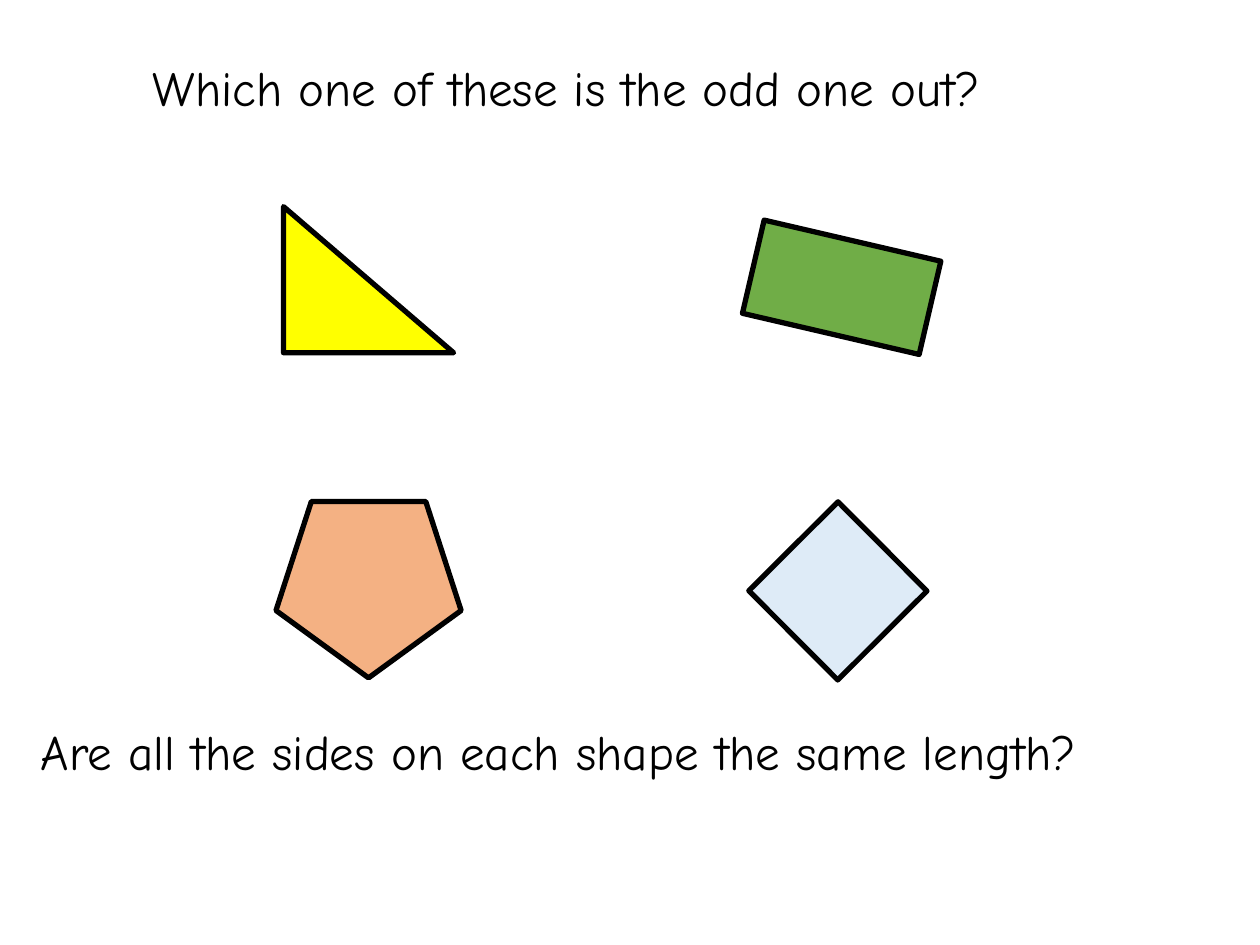
from pptx import Presentation
from pptx.dml.color import RGBColor
from pptx.enum.shapes import MSO_SHAPE
from pptx.enum.text import MSO_ANCHOR, MSO_AUTO_SIZE, PP_ALIGN
from pptx.util import Inches, Pt

TRIANGLE = MSO_SHAPE.ISOSCELES_TRIANGLE
RECTANGLE = MSO_SHAPE.RECTANGLE
PENTAGON = MSO_SHAPE.REGULAR_PENTAGON
TOP = MSO_ANCHOR.TOP
FIT_SHAPE = MSO_AUTO_SIZE.SHAPE_TO_FIT_TEXT
CENTER = PP_ALIGN.CENTER

TITLE_ONLY = 5
FONT = "Comic Neue"
COLORS = {
    "ink": "000000",
    "paper": "FFFFFF",
    "triangle": "FFFF00",
    "rectangle": "70AD47",
    "pentagon": "F4B183",
    "square": "DEEBF7",
}


def color(name):
    return RGBColor.from_string(COLORS[name])


def write_question(holder, box, wording):
    holder.left, holder.top, holder.width, holder.height = map(Inches, box)
    frame = holder.text_frame
    frame.text = wording
    frame.word_wrap = True
    frame.auto_size = FIT_SHAPE
    frame.vertical_anchor = TOP
    frame.margin_left = frame.margin_right = Inches(0.1)
    frame.margin_top = frame.margin_bottom = Inches(0.05)
    paragraph = frame.paragraphs[0]
    paragraph.alignment = CENTER
    paragraph.line_spacing = 1.0
    paragraph.space_before = Pt(0)
    font = paragraph.runs[0].font
    font.name, font.size = FONT, Pt(28)
    font.color.rgb = color("ink")


def draw_polygon(slide, box, kind, fill, rotation=0):
    polygon = slide.shapes.add_shape(kind, *map(Inches, box))
    polygon.rotation = rotation
    polygon.shadow.inherit = False
    polygon.fill.solid()
    polygon.fill.fore_color.rgb = color(fill)
    polygon.line.color.rgb = color("ink")
    polygon.line.width = Pt(3)
    return polygon


def draw_polygons(slide):
    triangle = draw_polygon(slide, (2.25, 1.64, 1.35, 1.16), TRIANGLE, "triangle")
    triangle.adjustments[0] = 0
    draw_polygon(slide, (5.96, 1.9, 1.44, 0.76), RECTANGLE, "rectangle", 13.1)
    draw_polygon(slide, (2.19, 3.98, 1.47, 1.4), PENTAGON, "pentagon", 180)
    draw_polygon(slide, (6.15, 4.19, 1, 1), RECTANGLE, "square", 45.1)


def main():
    presentation = Presentation()
    presentation.slide_width, presentation.slide_height = Inches(10), Inches(7.5)
    slide = presentation.slides.add_slide(presentation.slide_layouts[TITLE_ONLY])
    slide.background.fill.solid()
    slide.background.fill.fore_color.rgb = color("paper")

    write_question(slide.shapes.title, (0.12, 0.41, 8.75, 0.57),
                   "Which one of these is the odd one out?")
    draw_polygons(slide)
    hint_box = (0.12, 5.68, 8.75, 1.04)
    hint = slide.shapes.add_textbox(*map(Inches, hint_box))
    write_question(hint, hint_box, "Are all the sides on each shape the same length? ")

    presentation.save("out.pptx")


if __name__ == "__main__":
    main()
